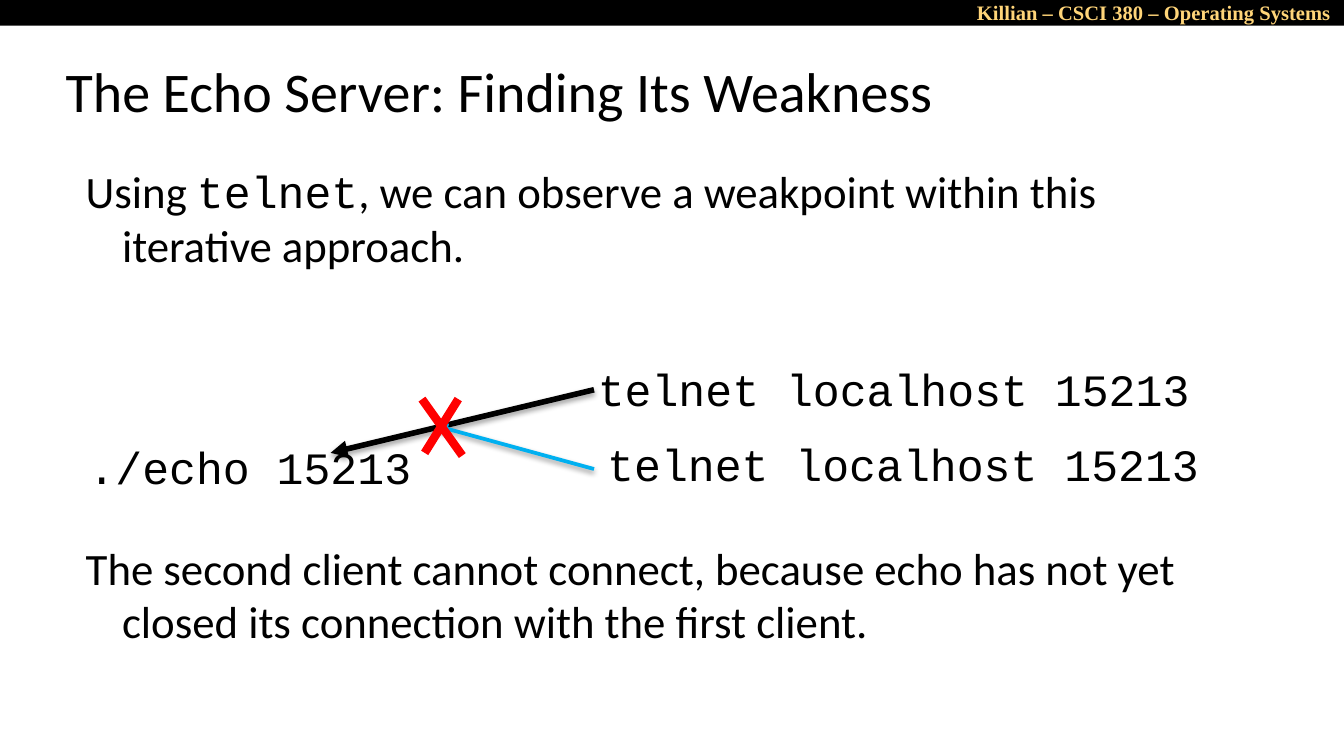
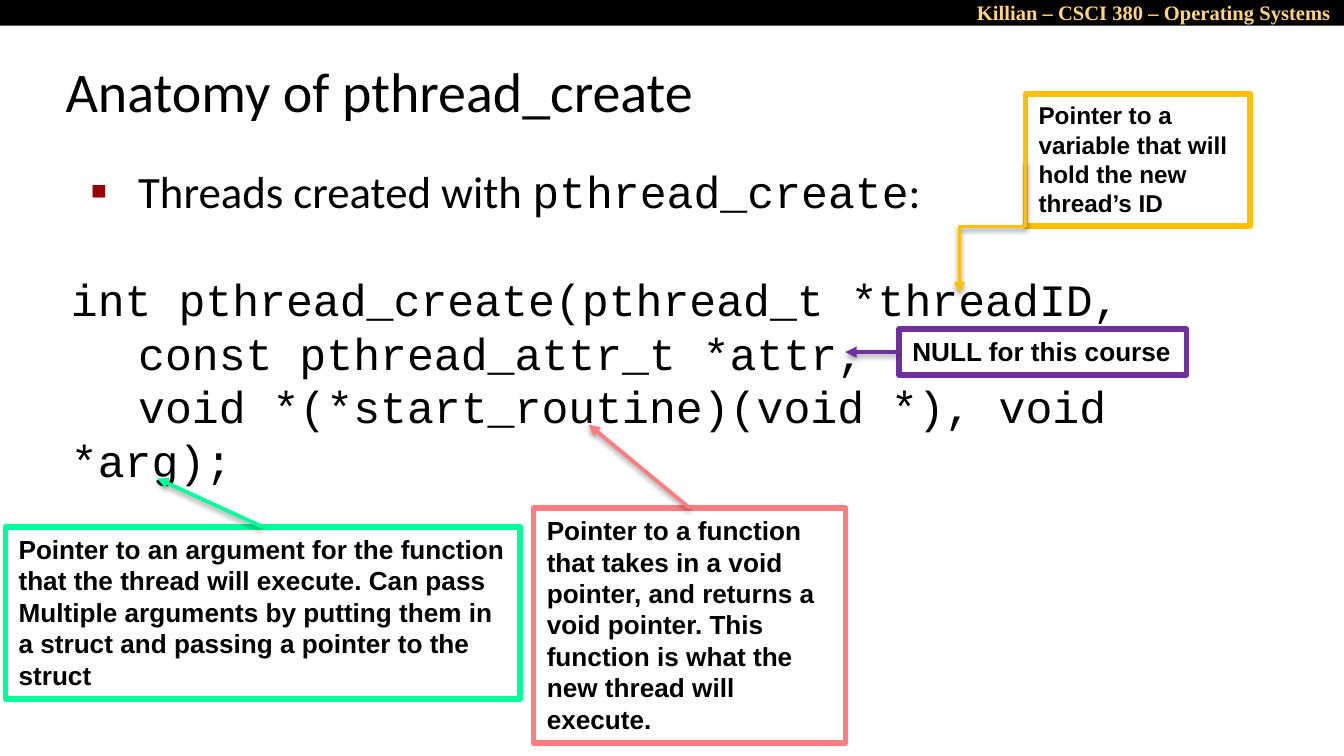
"""Build two course slides about an echo server and pthread_create."""
from dataclasses import dataclass

from lxml.etree import SubElement
from pptx import Presentation
from pptx.dml.color import RGBColor
from pptx.enum.shapes import MSO_CONNECTOR, MSO_SHAPE
from pptx.enum.text import MSO_ANCHOR, MSO_AUTO_SIZE, PP_ALIGN
from pptx.oxml.ns import qn
from pptx.util import Inches, Pt

COLORS = {
    "black": "000000",
    "header": "FFD579",
    "bullet": "990000",
    "blue": "00B0F0",
    "red": "FF0000",
    "gold": "FFC000",
    "purple": "7030A0",
    "pink": "FF7C80",
    "green": "00FF99",
}
SANS, CODE, SERIF, LABEL = "Calibri", "Courier New", "Times New Roman", "Arial"
SLIDE_WIDTH = 10
SLIDE_HEIGHT = SLIDE_WIDTH * 9 / 16
LEADING = 1.2
BODY_SIZE = 24
BODY_LINE = BODY_SIZE * LEADING


@dataclass
class Style:
    size: int = BODY_SIZE
    color: str = "black"
    bold: bool = False


@dataclass
class Block:
    runs: list[tuple[str, str]]
    margin: float = 0
    indent: float = 0
    lines_before: int = 0
    bullet: bool = False
    align: PP_ALIGN = PP_ALIGN.LEFT


@dataclass
class Line:
    start: tuple[float, float]
    end: tuple[float, float]
    color: str
    width: float = 2
    arrow: bool = True
    bent: bool = False


@dataclass
class Callout:
    box: tuple[float, float, float, float]
    color: str
    lines: list[str]
    pointer: Line
    size: int = 14
    wrap: bool = False


def rgb(name: str) -> RGBColor:
    return RGBColor.from_string(COLORS[name])


def add_bullet(properties) -> None:
    color = SubElement(properties, qn("a:buClr"))
    SubElement(color, qn("a:srgbClr"), val=COLORS["bullet"])
    SubElement(properties, qn("a:buSzPct"), val="58000")
    SubElement(properties, qn("a:buFont"), typeface=LABEL)
    SubElement(properties, qn("a:buChar"), char="■")


def write_blocks(text_frame, blocks: list[Block], style: Style) -> None:
    for index, block in enumerate(blocks):
        paragraph = text_frame.paragraphs[0] if index == 0 else text_frame.add_paragraph()
        paragraph.alignment = block.align
        paragraph.line_spacing = Pt(style.size * LEADING)
        paragraph.space_before = Pt(block.lines_before * BODY_LINE)
        properties = paragraph._p.get_or_add_pPr()
        properties.set("marL", str(Inches(block.margin)))
        properties.set("indent", str(Inches(block.indent)))
        if block.bullet:
            add_bullet(properties)
        for text, font in block.runs:
            run = paragraph.add_run()
            run.text = text
            run.font.name = font
            run.font.size = Pt(style.size)
            run.font.bold = style.bold
            run.font.color.rgb = rgb(style.color)


def add_text(slide, box: tuple[float, float, float, float], blocks: list[Block],
             style: Style, vertical_inset: float = 0.1,
             anchor: MSO_ANCHOR = MSO_ANCHOR.TOP) -> None:
    text_frame = slide.shapes.add_textbox(*map(Inches, box)).text_frame
    text_frame.word_wrap = True
    text_frame.vertical_anchor = anchor
    text_frame.margin_left = text_frame.margin_right = Inches(0.1)
    text_frame.margin_top = text_frame.margin_bottom = Inches(vertical_inset)
    write_blocks(text_frame, blocks, style)


def add_line(slide, line: Line) -> None:
    (left, top), (right, bottom) = line.start, line.end
    kind = MSO_CONNECTOR.STRAIGHT
    if line.bent:
        kind = MSO_CONNECTOR.ELBOW
        center_x, center_y = (left + right) / 2, (top + bottom) / 2
        half_length, half_drop = (bottom - top) / 2, (left - right) / 2
        left, right = center_x - half_length, center_x + half_length
        top, bottom = center_y - half_drop, center_y + half_drop
    connector = slide.shapes.add_connector(kind, *map(Inches, (left, top, right, bottom)))
    connector.line.color.rgb = rgb(line.color)
    connector.line.width = Pt(line.width)
    properties = connector._element.spPr
    if line.bent:
        properties.find(qn("a:xfrm")).set("rot", "5400000")
    effects = SubElement(properties, qn("a:effectLst"))
    if line.arrow:
        SubElement(properties.find(qn("a:ln")), qn("a:tailEnd"), type="triangle")
        shadow = SubElement(effects, qn("a:outerShdw"), blurRad=str(Pt(3.1)),
                            dist=str(Pt(1.6)), dir="5400000", rotWithShape="0")
        color = SubElement(shadow, qn("a:srgbClr"), val=COLORS["black"])
        SubElement(color, qn("a:alpha"), val="38000")


def add_callout(slide, callout: Callout) -> None:
    shape = slide.shapes.add_shape(MSO_SHAPE.RECTANGLE, *map(Inches, callout.box))
    shape.shadow.inherit = False
    shape.fill.background()
    shape.line.color.rgb = rgb(callout.color)
    shape.line.width = Pt(3)
    text_frame = shape.text_frame
    text_frame.word_wrap = callout.wrap
    text_frame.auto_size = MSO_AUTO_SIZE.SHAPE_TO_FIT_TEXT
    text_frame.vertical_anchor = MSO_ANCHOR.TOP
    write_blocks(text_frame, [Block([(text, LABEL)]) for text in callout.lines],
                 Style(size=callout.size, bold=True))
    add_line(slide, callout.pointer)


def add_course_slide(presentation, title: str, body: list[Block]):
    slide = presentation.slides.add_slide(presentation.slide_layouts[6])
    band = slide.shapes.add_shape(MSO_SHAPE.RECTANGLE, 0, 0, Inches(SLIDE_WIDTH), Inches(0.19))
    band.shadow.inherit = False
    band.fill.solid()
    band.fill.fore_color.rgb = rgb("black")
    band.line.fill.background()
    header = Block([("Killian – CSCI 380 – Operating Systems", SERIF)], align=PP_ALIGN.RIGHT)
    add_text(slide, (6.93, -0.05, 3.07, 0.21), [header],
             Style(size=11, color="header", bold=True), vertical_inset=0.05)
    add_text(slide, (0.39, 0.36, 8.3, 0.62), [Block([(title, SANS)], 0.13, -0.13)],
             Style(size=30), anchor=MSO_ANCHOR.MIDDLE)
    add_text(slide, (0.43, 1.12, 8.64, 4.08), body, Style())
    return slide


def build_echo_slide(presentation) -> None:
    slide = add_course_slide(presentation, "The Echo Server: Finding Its Weakness", [
        Block([("Using ", SANS), ("telnet", CODE),
               (", we can observe a weakpoint within this iterative approach.", SANS)],
              0.38, -0.27),
        Block([("The second client cannot connect, because echo has not yet closed "
                "its connection with the first client.", SANS)],
              0.38, -0.27, lines_before=5),
    ])
    client = "telnet localhost 15213"
    commands = [
        (client, 4.35, 2.59, 4.97),
        ("./echo 15213", 0.56, 3.17, 2.69),
        (client, 4.42, 3.15, 4.97),
    ]
    for command, left, top, width in commands:
        add_text(slide, (left, top, width, 0.84), [Block([(command, CODE)])], Style())
    for line in [
        Line((4.42, 2.9), (2.46, 3.37), "black", 3),
        Line((4.42, 3.49), (3.25, 3.17), "blue"),
        Line((3.14, 2.97), (3.44, 3.39), "red", 4.5, arrow=False),
        Line((3.41, 2.97), (3.16, 3.37), "red", 4.5, arrow=False),
    ]:
        add_line(slide, line)


def build_pthread_slide(presentation) -> None:
    slide = add_course_slide(presentation, "Anatomy of pthread_create", [
        Block([("Threads created with ", SANS), ("pthread_create", CODE), (":", SANS)],
              0.5, -0.35, bullet=True),
        Block([("int pthread_create(pthread_t *threadID,", CODE)], lines_before=1),
        Block([("const pthread_attr_t *attr,", CODE)], indent=0.5),
        Block([("void *(*start_routine)(void *), void *arg);", CODE)], indent=0.5),
    ])
    for callout in [
        Callout((7.63, 0.7, 1.67, 0.98), "gold",
                ["Pointer to a variable that will hold the new thread’s ID"],
                Line((7.63, 1.19), (7.14, 2.18), "gold", bent=True), size=13, wrap=True),
        Callout((6.69, 2.45, 2.14, 0.34), "purple", ["NULL for this course"],
                Line((6.69, 2.62), (6.29, 2.62), "purple")),
        Callout((3.97, 3.78, 2.32, 1.75), "pink",
                ["Pointer to a function that takes in a void pointer, and returns a "
                 "void pointer. This function is what the new thread will execute."],
                Line((5.13, 3.78), (4.38, 3.16), "pink"), wrap=True),
        Callout((0.04, 3.92, 3.83, 1.28), "green",
                ["Pointer to an argument for the function",
                 "that the thread will execute. Can pass",
                 "Multiple arguments by putting them in",
                 "a struct and passing a pointer to the",
                 "struct"],
                Line((1.95, 3.92), (1.17, 3.56), "green")),
    ]:
        add_callout(slide, callout)


def main() -> None:
    presentation = Presentation()
    presentation.slide_width = Inches(SLIDE_WIDTH)
    presentation.slide_height = Inches(SLIDE_HEIGHT)
    build_echo_slide(presentation)
    build_pthread_slide(presentation)
    presentation.save("out.pptx")


if __name__ == "__main__":
    main()
